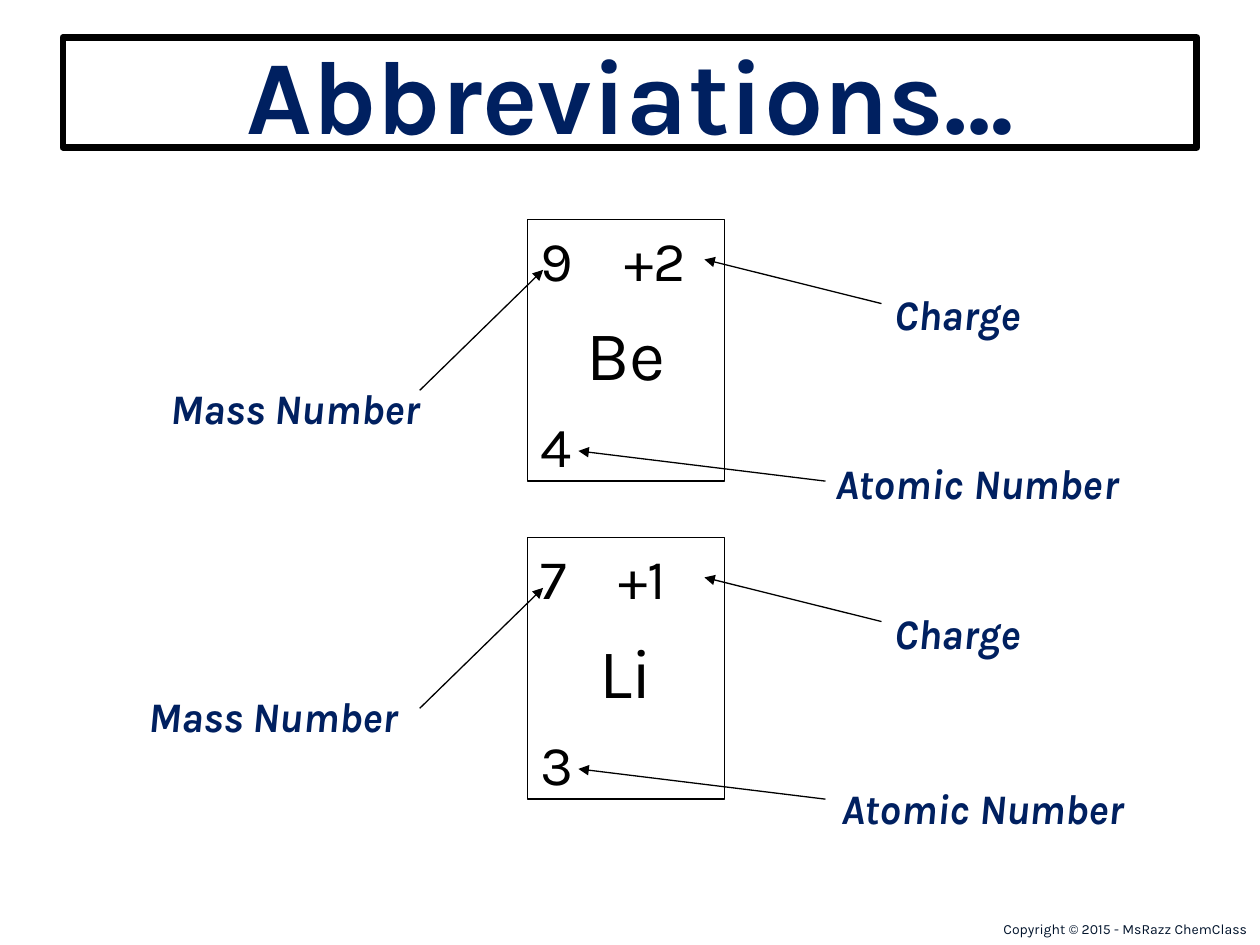
from lxml.etree import SubElement
from pptx import Presentation
from pptx.dml.color import RGBColor
from pptx.enum.shapes import MSO_CONNECTOR as Link, MSO_SHAPE as Shape
from pptx.enum.text import MSO_ANCHOR as Anchor, MSO_AUTO_SIZE as Fit, PP_ALIGN as Align
from pptx.oxml.ns import qn
from pptx.util import Cm, Pt

# Content: symbol cards, and labels with left, top and width in cm
TITLE = "Abbreviations…"
CREDIT = "Copyright © 2015 - MsRazz ChemClass"
CARDS = [  # mass, charge, symbol, atomic number, tab for the charge
    ("9", "+2", "Be", "4", 1.70),
    ("7", "+1", "Li", "3", 1.58),
]
LABELS = [
    ("Mass Number", 3.18, 7.59, 6.15),
    ("Atomic Number", 16.59, 9.09, 6.91),
    ("Charge", 17.78, 5.69, 6.15),
    ("Mass Number", 2.74, 13.79, 6.15),
    ("Atomic Number", 16.71, 15.65, 6.91),
    ("Charge", 17.78, 12.12, 6.15),
]

# Layout in cm; the second card and its arrows sit one step lower
CARD = (10.64, 4.42, 3.96, 5.28)
ARROWS = [
    (17.77, 6.12, 14.20, 5.23),
    (16.64, 9.70, 11.66, 9.09),
    (8.46, 7.87, 10.95, 5.44),
]
STEP = 6.41

THEME = dict(
    font="Karla", ink="000000", navy="002060", dark="02142C", paper="FFFFFF",
    title=60, symbol=40, number=32, label=24, credit=8, thin=0.75, thick=4,
)


def color(name):
    return RGBColor.from_string(THEME[name])


def write(para, text, size="label", ink="navy", bold=False, italic=False,
          align=Align.LEFT, after=0, tab=None):
    if tab:
        tabs = SubElement(para._p.get_or_add_pPr(), qn("a:tabLst"))
        SubElement(tabs, qn("a:tab"), pos=str(Cm(tab)), algn="l")
    para.alignment = align
    para.space_before, para.space_after = Pt(0), Pt(after)
    run = para.add_run()
    run.text = text
    font = run.font
    font.name, font.size = THEME["font"], Pt(THEME[size])
    font.bold, font.italic = bold, italic
    font.color.rgb = color(ink)


def paint(shape, width):
    shape.fill.solid()
    shape.fill.fore_color.rgb = color("paper")
    shape.line.color.rgb = color("ink")
    shape.line.width = Pt(THEME[width])


def box(slide, text, left, top, wide, high, **form):
    frame = slide.shapes.add_textbox(*map(Cm, (left, top, wide, high))).text_frame
    frame.word_wrap = True
    write(frame.paragraphs[0], text, **form)


def card(slide, drop, mass, charge, symbol, atomic, tab):
    left, top, wide, high = CARD
    shape = slide.shapes.add_shape(
        Shape.RECTANGLE, Cm(left), Cm(top + drop), Cm(wide), Cm(high))
    shape.shadow.inherit = False
    paint(shape, "thin")
    frame = shape.text_frame
    frame.word_wrap, frame.vertical_anchor = True, Anchor.TOP
    rows = [
        (f"{mass}\t{charge}", dict(size="number", tab=tab)),
        (symbol, dict(size="symbol", align=Align.CENTER)),
        (atomic, dict(size="number")),
    ]
    for i, (text, form) in enumerate(rows):
        para = frame.add_paragraph() if i else frame.paragraphs[0]
        write(para, text, ink="ink", after=10, **form)


def arrow(slide, drop, x1, y1, x2, y2):
    line = slide.shapes.add_connector(
        Link.STRAIGHT, Cm(x1), Cm(y1 + drop), Cm(x2), Cm(y2 + drop))
    line.line.color.rgb = color("ink")
    line.line.width = Pt(THEME["thin"])
    SubElement(line.line._get_or_add_ln(), qn("a:tailEnd"), type="triangle")
    SubElement(line._element.spPr, qn("a:effectLst"))


def main():
    deck = Presentation()
    deck.slide_width, deck.slide_height = Cm(25.4), Cm(19.05)
    slide = deck.slides.add_slide(deck.slide_layouts[5])

    # Framed title
    title = slide.shapes.title
    title.left, title.top, title.width, title.height = map(Cm, (1.27, 0.76, 22.86, 2.21))
    paint(title, "thick")
    frame = title.text_frame
    frame.auto_size, frame.vertical_anchor = Fit.NONE, Anchor.MIDDLE
    write(frame.paragraphs[0], TITLE, size="title", bold=True, align=Align.CENTER)

    # Cards with their arrows
    for i, parts in enumerate(CARDS):
        card(slide, i * STEP, *parts)
        for ends in ARROWS:
            arrow(slide, i * STEP, *ends)

    # Labels and credit
    for text, left, top, wide in LABELS:
        box(slide, text, left, top, wide, 1.3, bold=True, italic=True)
    box(slide, CREDIT, 19.38, 18.44, 6.02, 0.61,
        size="credit", ink="dark", align=Align.RIGHT)

    deck.save("out.pptx")


if __name__ == "__main__":
    main()
